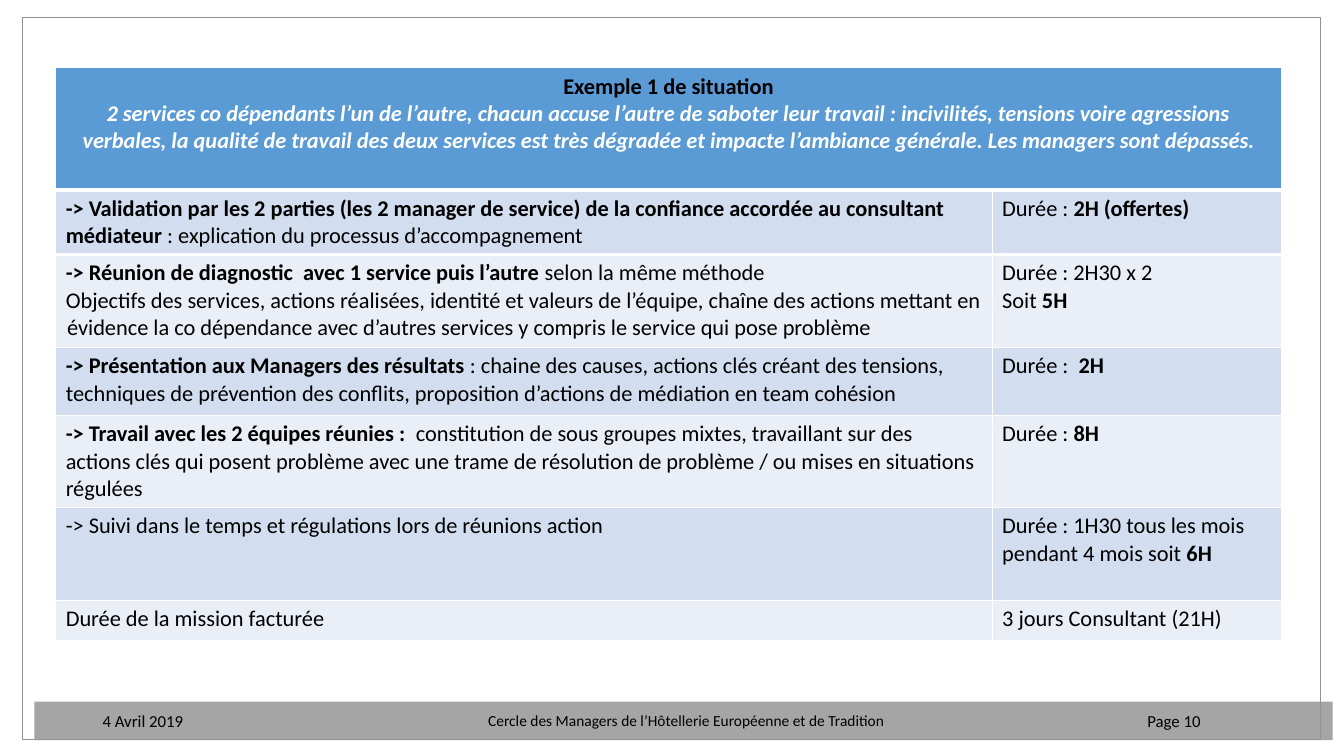
from lxml import etree
from pptx import Presentation
from pptx.dml.color import RGBColor
from pptx.enum.shapes import MSO_SHAPE
from pptx.enum.text import MSO_ANCHOR, PP_ALIGN
from pptx.oxml.ns import qn
from pptx.util import Pt

RECT = MSO_SHAPE.RECTANGLE
MIDDLE = MSO_ANCHOR.MIDDLE
LEFT, CENTER, RIGHT = PP_ALIGN.LEFT, PP_ALIGN.CENTER, PP_ALIGN.RIGHT

THEME = {
    "font": "Calibri", "body": 16, "foot": 12, "small": 11,
    "ink": "000000", "white": "FFFFFF", "head": "5B9BD5",
    "bands": ("D2DEEF", "EAEFF7"), "bar": "A5A5A5", "frame": "929292",
}

TITLE = "Exemple 1 de situation"
CASE = (
    "2 services co dépendants l’un de l’autre, chacun accuse l’autre de saboter "
    "leur travail : incivilités, tensions voire agressions verbales, la qualité "
    "de travail des deux services est très dégradée et impacte l’ambiance "
    "générale. Les managers sont dépassés."
)

STEPS = [
    ([[("-> Validation par les 2 parties (les 2 manager de service) de la "
        "confiance accordée au consultant médiateur ", True),
       (": explication du processus d’accompagnement", False)]],
     [[("Durée : ", False), ("2H (offertes)", True)]]),
    ([[("-> Réunion de diagnostic  avec 1 service puis l’autre ", True),
       ("selon la même méthode", False)],
      [("Objectifs des services, actions réalisées, identité et valeurs de "
        "l’équipe, chaîne des actions mettant en évidence la co dépendance avec "
        "d’autres services y compris le service qui pose problème", False)]],
     [[("Durée : 2H30 x 2", False)], [("Soit ", False), ("5H", True)]]),
    ([[("-> Présentation aux Managers des résultats ", True),
       (": chaine des causes, actions clés créant des tensions, techniques de "
        "prévention des conflits, proposition d’actions de médiation en team "
        "cohésion", False)]],
     [[("Durée :  ", False), ("2H", True)]]),
    ([[("-> Travail avec les 2 équipes réunies :  ", True),
       ("constitution de sous groupes mixtes, travaillant sur des actions clés "
        "qui posent problème avec une trame de résolution de problème / ou mises "
        "en situations régulées", False)]],
     [[("Durée : ", False), ("8H", True)]]),
    ([[("-> Suivi dans le temps et régulations lors de réunions action", False)]],
     [[("Durée : 1H30 tous les mois pendant 4 mois soit ", False), ("6H", True)]]),
    ([[("Durée de la mission facturée", False)]],
     [[("3 jours Consultant (21H)", False)]]),
]

FOOT = [
    ("4 Avril 2019", 66.2, 216, "foot", LEFT),
    ("Cercle des Managers de l’Hôtellerie Européenne et de Tradition",
     302.4, 375.8, "small", CENTER),
    ("Page 10", 800.6, 64.1, "foot", RIGHT),
]

PANELS = [
    (0, 0, 960, 12.2, "white"),
    (943.9, 0, 16.1, 540, "white"),
    (0, 0, 15.8, 540, "white"),
    (24.5, 501.2, 927.4, 27.4, "bar"),
]

COLS = (668.9, 206.6)
ROWS = (87.1, 46.4, 66.4, 48.4, 65.9, 66.4, 28.6)
HANG = Pt(0.9)


def color(name):
    return RGBColor.from_string(THEME.get(name, name))


def style(font, size, ink):
    font.name = THEME["font"]
    font.size = Pt(THEME[size])
    font.color.rgb = color(ink)


def box(slide, left, top, width, height):
    shape = slide.shapes.add_shape(RECT, Pt(left), Pt(top), Pt(width), Pt(height))
    shape.shadow.inherit = False
    return shape


def rule(cell, tag, width):
    line = etree.Element(qn(tag), w=str(Pt(width)))
    fill = etree.SubElement(line, qn("a:solidFill"))
    etree.SubElement(fill, qn("a:srgbClr"), val=THEME["white"])
    cell._tc.get_or_add_tcPr().insert(0, line)


def paint(cell, fill):
    cell.fill.solid()
    cell.fill.fore_color.rgb = color(fill)


def write(cell, paras, hang=False):
    frame = cell.text_frame
    for i, runs in enumerate(paras):
        para = frame.add_paragraph() if i else frame.paragraphs[0]
        if hang:
            props = para._p.get_or_add_pPr()
            props.set("marL", str(HANG))
            props.set("indent", str(-HANG))
        style(para.font, "body", "ink")
        for text, bold in runs:
            run = para.add_run()
            run.text = text
            run.font.bold = bold


def add_grid(slide):
    grid = slide.shapes.add_table(
        len(ROWS), len(COLS), Pt(39.8), Pt(48.4), Pt(sum(COLS)), Pt(sum(ROWS))
    ).table
    for col, width in zip(grid.columns, COLS):
        col.width = Pt(width)
    for row, height in zip(grid.rows, ROWS):
        row.height = Pt(height)

    head = grid.cell(0, 0)
    head.merge(grid.cell(0, 1))
    paint(head, "head")
    write(head, [[(TITLE, True)], [(CASE, True)]], True)
    for para in head.text_frame.paragraphs:
        para.alignment = CENTER
    para.font.italic = True
    para.font.color.rgb = color("white")

    for r, step in enumerate(STEPS, 1):
        for c, paras in enumerate(step):
            cell = grid.cell(r, c)
            paint(cell, THEME["bands"][(r - 1) % 2])
            write(cell, paras, c == 0 and len(paras) > 1)

    for c in range(len(COLS)):
        rule(grid.cell(0, c), "a:lnB", 3)
        rule(grid.cell(1, c), "a:lnT", 3)


def add_foot(slide):
    for text, left, width, size, align in FOOT:
        label = slide.shapes.add_textbox(Pt(left), Pt(500.4), Pt(width), Pt(28.8))
        frame = label.text_frame
        frame.word_wrap = True
        frame.vertical_anchor = MIDDLE
        para = frame.paragraphs[0]
        para.text = text
        para.alignment = align
        style(para.font, size, "ink")


def main():
    deck = Presentation()
    deck.slide_width, deck.slide_height = Pt(960), Pt(540)
    slide = deck.slides.add_slide(deck.slide_layouts[6])

    for *place, fill in PANELS:
        panel = box(slide, *place)
        panel.fill.solid()
        panel.fill.fore_color.rgb = color(fill)
        panel.line.fill.background()

    edge = box(slide, 15.8, 12.4, 927.4, 515.6)
    edge.fill.background()
    edge.line.color.rgb = color("frame")
    edge.line.width = Pt(0.75)

    add_foot(slide)
    add_grid(slide)
    deck.save("out.pptx")


if __name__ == "__main__":
    main()
